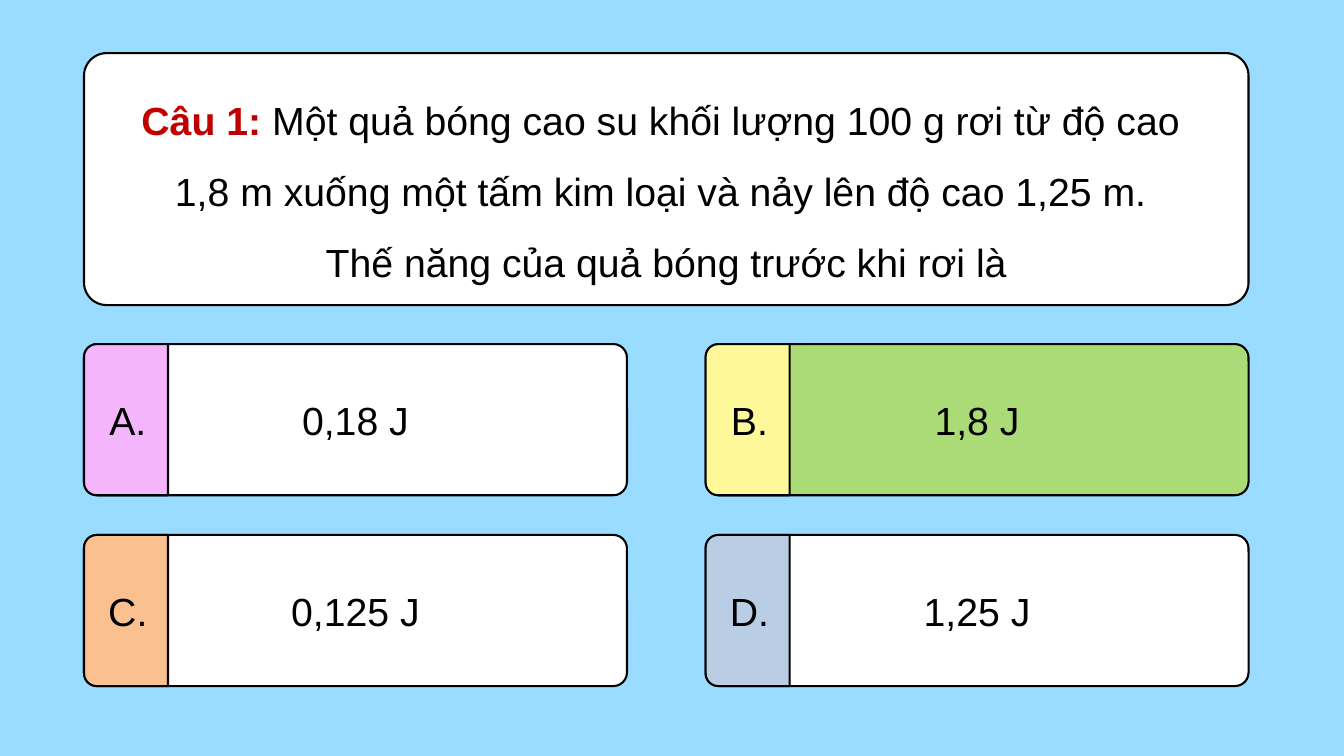
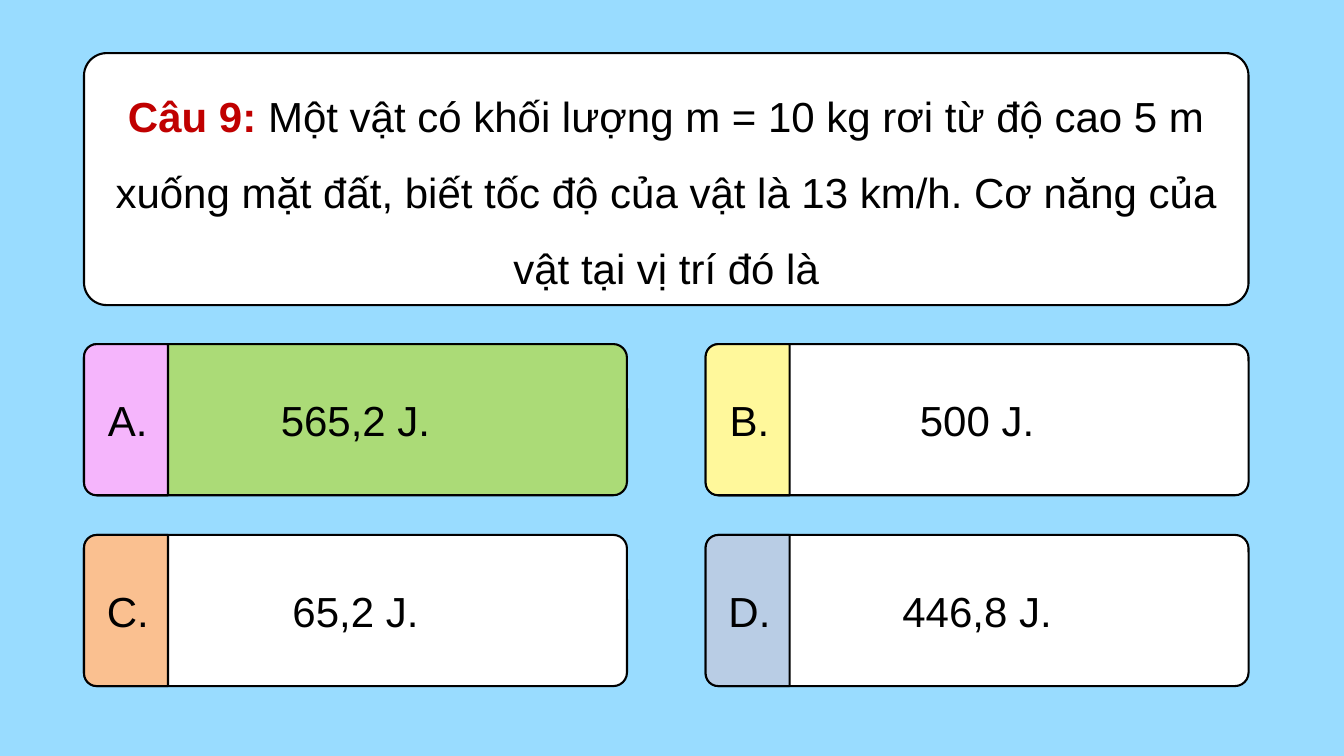
from collections import namedtuple

from pptx import Presentation
from pptx.dml.color import RGBColor
from pptx.enum.shapes import MSO_SHAPE
from pptx.enum.text import MSO_ANCHOR, PP_ALIGN
from pptx.util import Inches, Pt

COLOURS = {
    "sky": "99DCFF", "white": "FFFFFF", "black": "000000",
    "red": "C00000", "correct": "ABDB77",
    "A": "F5B5FC", "B": "FFF89B", "C": "FAC090", "D": "B9CDE5",
}
FONT = "Arial"
CORNER = 0.09
TAB_CORNER = 0.15

# All boxes are in inches
Box = namedtuple("Box", "left top width height")
QUESTION_BOX = Box(1.25, 0.79, 17.33, 3.75)
CARD_BOX = Box(1.25, 5.12, 8.08, 2.25)
COLUMN_STEP, ROW_STEP = 9.25, 2.84
TAB_WIDTH = 1.25

QUIZ = [
    {
        "label": "Câu 1: ",
        "lines": [
            "Một quả bóng cao su khối lượng 100 g rơi từ độ cao ",
            "1,8 m xuống một tấm kim loại và nảy lên độ cao 1,25 m. ",
            "Thế năng của quả bóng trước khi rơi là",
        ],
        "answers": ["0,18 J", "1,8 J", "0,125 J", "1,25 J"],
        "correct": "B",
        "size": 42,
    },
    {
        "label": "Câu 9: ",
        "lines": [
            "Một vật có khối lượng m = 10 kg rơi từ độ cao 5 m xuống mặt đất, "
            "biết tốc độ của vật là 13 km/h. Cơ năng của vật tại vị trí đó là",
        ],
        "answers": ["565,2 J.", "500 J.", "65,2 J.", "446,8 J."],
        "correct": "A",
        "size": 45,
    },
]


def colour(name):
    return RGBColor.from_string(COLOURS[name])


def format_span(span, size, ink="black", bold=False):
    span.font.name = FONT
    span.font.size = Pt(size)
    span.font.bold = bold
    span.font.color.rgb = colour(ink)


def add_panel(shapes, kind, box, fill, corners):
    """Outlined shape with its text frame ready for centred text."""
    panel = shapes.add_shape(kind, *(Inches(length) for length in box))
    panel.shadow.inherit = False
    panel.fill.solid()
    panel.fill.fore_color.rgb = colour(fill)
    panel.line.color.rgb = colour("black")
    panel.line.width = Pt(2.25)
    for index, corner in enumerate(corners):
        panel.adjustments[index] = corner
    panel.text_frame.word_wrap = True
    panel.text_frame.vertical_anchor = MSO_ANCHOR.MIDDLE
    return panel


def write_centred(panel, text, size):
    para = panel.text_frame.paragraphs[0]
    para.text = text
    para.alignment = PP_ALIGN.CENTER
    format_span(para.runs[0], size)


def add_question(page, box, label, lines, size):
    panel = add_panel(page.shapes, MSO_SHAPE.ROUNDED_RECTANGLE, box, "white", [CORNER])
    frame = panel.text_frame
    for index, line in enumerate(lines):
        para = frame.paragraphs[0] if index == 0 else frame.add_paragraph()
        para.alignment = PP_ALIGN.CENTER
        para.line_spacing = 1.5
        if index == 0:
            heading = para.add_run()
            heading.text = label
            format_span(heading, size, "red", bold=True)
        span = para.add_run()
        span.text = line
        format_span(span, size)


def add_answer(page, box, letter, answer, size, fill):
    card = page.shapes.add_group_shape()
    body = add_panel(card.shapes, MSO_SHAPE.ROUNDED_RECTANGLE, box, fill, [CORNER])
    write_centred(body, answer, size)

    # The tab is a top-rounded shape turned left about its centre
    shift = (box.height - TAB_WIDTH) / 2
    tab_box = Box(box.left - shift, box.top + shift, box.height, TAB_WIDTH)
    tab = add_panel(card.shapes, MSO_SHAPE.ROUND_2_SAME_RECTANGLE, tab_box,
                    letter, [TAB_CORNER, 0])
    tab.rotation = 270
    # Vertical text cancels the turn, so the letter stands upright
    tab.element.txBody.bodyPr.set("vert", "vert")
    write_centred(tab, f"{letter}.", size)


def add_quiz_page(deck, quiz):
    page = deck.slides.add_slide(deck.slide_layouts[6])
    page.background.fill.solid()
    page.background.fill.fore_color.rgb = colour("sky")
    add_question(page, QUESTION_BOX, quiz["label"], quiz["lines"], quiz["size"])

    # Answers in a grid of two columns
    for index, (letter, answer) in enumerate(zip("ABCD", quiz["answers"])):
        row, column = divmod(index, 2)
        box = CARD_BOX._replace(left=CARD_BOX.left + column * COLUMN_STEP,
                                top=CARD_BOX.top + row * ROW_STEP)
        fill = "correct" if letter == quiz["correct"] else "white"
        add_answer(page, box, letter, answer, quiz["size"], fill)


def main():
    deck = Presentation()
    deck.slide_width = Inches(20)
    deck.slide_height = Inches(11.25)
    for quiz in QUIZ:
        add_quiz_page(deck, quiz)
    deck.save("out.pptx")


if __name__ == "__main__":
    main()
